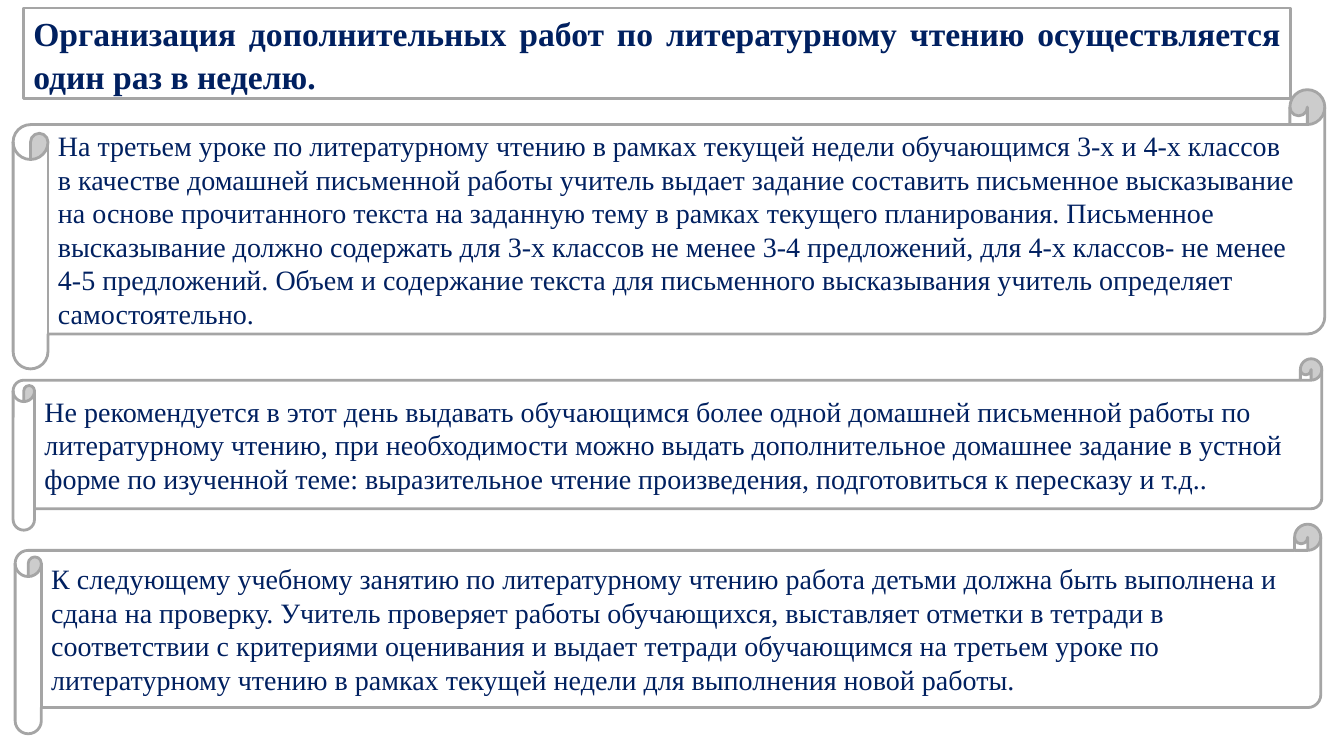
"""Build a slide on extra written work in literary reading."""
from dataclasses import dataclass

from lxml import etree
from pptx import Presentation
from pptx import util as u
from pptx.dml import color
from pptx.enum import shapes, text
from pptx.oxml import ns

HUES = {"paper": "FFFFFF", "edge": "A5A5A5", "ink": "002060"}
FONT = "Times New Roman"
HEAD = ("Организация дополнительных работ по литературному чтению "
        "осуществляется один раз в неделю.")


@dataclass(frozen=True)
class Scroll:
    """Place and wording of one scroll."""
    left: float
    top: float
    width: float
    height: float
    words: str


SCROLLS = [
    Scroll(0.13, 0.89, 13.01, 2.77,
           "На третьем уроке по литературному чтению в рамках текущей недели "
           "обучающимся 3-х и 4-х классов в качестве домашней письменной работы "
           "учитель выдает задание составить письменное высказывание на основе "
           "прочитанного текста на заданную тему в рамках текущего планирования. "
           "Письменное высказывание должно содержать для 3-х классов не менее "
           "3-4 предложений, для 4-х классов- не менее 4-5 предложений. Объем и "
           "содержание текста для письменного высказывания учитель определяет "
           "самостоятельно."),
    Scroll(0.13, 3.56, 12.98, 1.7,
           "Не рекомендуется в этот день выдавать обучающимся более одной "
           "домашней письменной работы по литературному чтению, при "
           "необходимости можно выдать дополнительное домашнее задание в устной "
           "форме по изученной теме: выразительное чтение произведения, "
           "подготовиться к пересказу и т.д.."),
    Scroll(0.15, 5.2, 12.95, 2.08,
           "К следующему учебному занятию по литературному чтению работа детьми "
           "должна быть выполнена и сдана на проверку. Учитель проверяет работы "
           "обучающихся, выставляет отметки в тетради в соответствии с "
           "критериями оценивания и выдает тетради обучающимся на третьем уроке "
           "по литературному чтению в рамках текущей недели для выполнения "
           "новой работы."),
]


def hue(name: str) -> color.RGBColor:
    """Return a named colour."""
    return color.RGBColor.from_string(HUES[name])


def dress(shape, words: str, size: int, bold: bool, align):
    """Fill and outline a shape, write its text and return the paragraph."""
    shape.fill.solid()
    shape.fill.fore_color.rgb = hue("paper")
    shape.line.color.rgb = hue("edge")
    shape.line.width = u.Pt(2)
    frame = shape.text_frame
    frame.text = words
    frame.word_wrap = True
    frame.auto_size = text.MSO_AUTO_SIZE.NONE
    frame.vertical_anchor = text.MSO_ANCHOR.MIDDLE
    para = frame.paragraphs[0]
    para.alignment = align
    font = para.font
    font.name, font.size, font.bold = FONT, u.Pt(size), bold
    font.color.rgb = hue("ink")
    return para


def add_head(slide) -> None:
    """Turn the title placeholder into the arrow banner."""
    title = slide.shapes.title
    title.left, title.top = u.Inches(0.23), u.Inches(0.08)
    title.width, title.height = u.Inches(12.57), u.Inches(0.9)
    geom = etree.SubElement(title.element.spPr, ns.qn("a:prstGeom"), prst="homePlate")
    etree.SubElement(geom, ns.qn("a:avLst"))
    para = dress(title, HEAD, 24, True, text.PP_ALIGN.JUSTIFY)
    para.line_spacing = 1.07
    para.space_after = u.Pt(8)


def add_scroll(slide, item: Scroll) -> None:
    """Draw one scroll with its text."""
    box = map(u.Inches, (item.left, item.top, item.width, item.height))
    shape = slide.shapes.add_shape(shapes.MSO_SHAPE.HORIZONTAL_SCROLL, *box)
    shape.shadow.inherit = False
    dress(shape, item.words, 20, False, text.PP_ALIGN.LEFT)


def main() -> None:
    """Build and save the slide."""
    deck = Presentation()
    deck.slide_width, deck.slide_height = u.Inches(13.33), u.Inches(7.5)
    slide = deck.slides.add_slide(deck.slide_layouts.get_by_name("Title Only"))
    add_head(slide)
    for item in SCROLLS:
        add_scroll(slide, item)
    deck.save("out.pptx")


if __name__ == "__main__":
    main()
